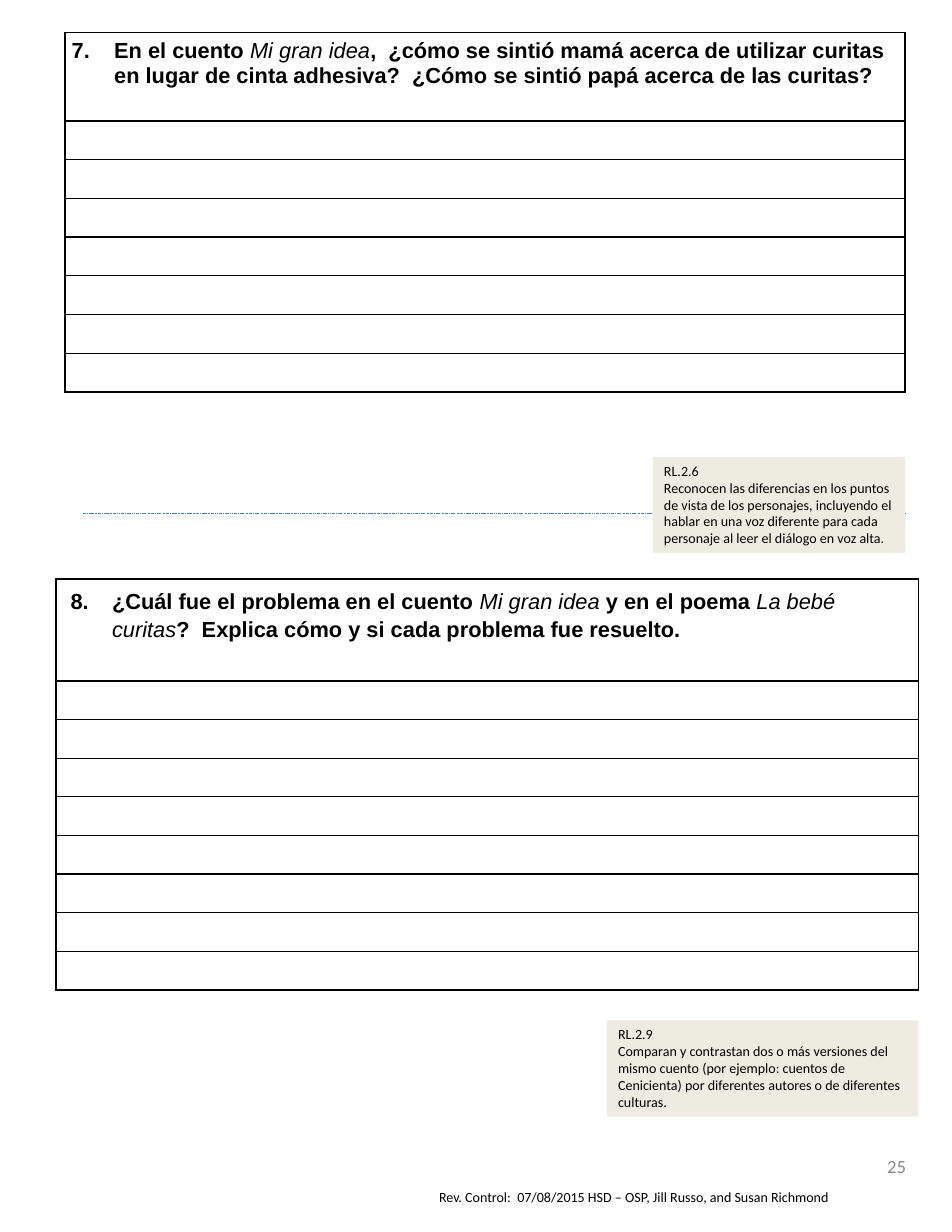
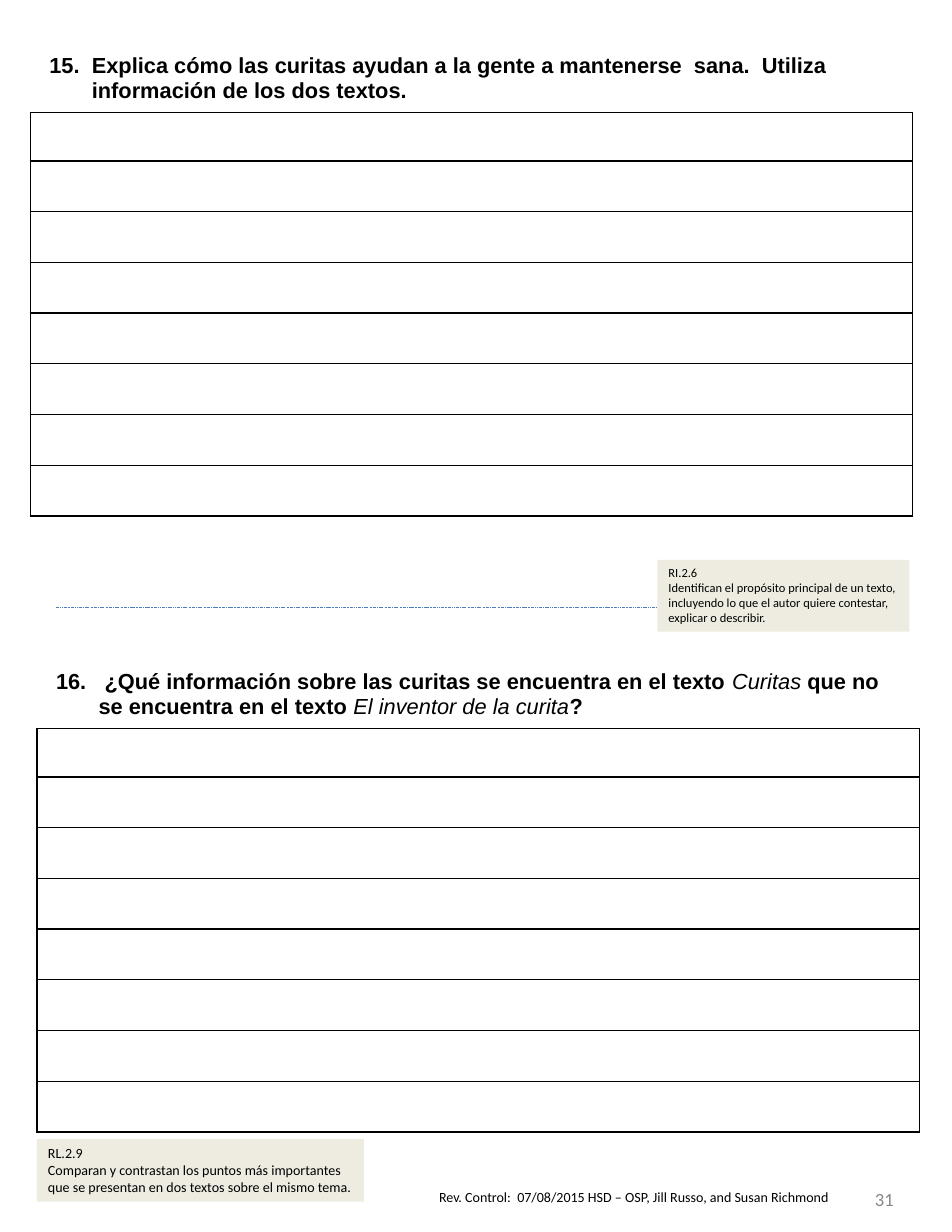
from dataclasses import dataclass

from lxml.etree import SubElement
from pptx import Presentation
from pptx.dml.color import RGBColor
from pptx.enum.dml import MSO_LINE
from pptx.enum.shapes import MSO_CONNECTOR, MSO_SHAPE
from pptx.enum.text import MSO_ANCHOR, PP_ALIGN
from pptx.oxml import parse_xml
from pptx.oxml.ns import nsdecls, qn
from pptx.util import Inches, Pt


@dataclass(frozen=True)
class Theme:
    ink: str = "000000"
    page_number: str = "888888"
    standard_fill: str = "EEECE1"
    divider: str = "4A7EBB"
    question_font: str = "Arial"
    body_font: str = "Calibri"
    question_size: int = 14
    answer_size: int = 12
    page_size: int = 12
    small_size: int = 9
    smallest_size: int = 8
    border_width: float = 1
    divider_width: float = 0.25


THEME = Theme()
FOOTER = "Rev. Control:  07/08/2015 HSD – OSP, Jill Russo, and Susan Richmond"
FOOTER_BOX = (3.81, 10.56, 4.25, 0.26)

# Questions: text alternates bold and italic; "heads" are the rows of their own
# height, and the remaining rows share what is left of the box height.
PAGES = [
    {
        "number": "25",
        "number_box": (7.17, 10.25, 0.92, 0.33),
        "number_inset": (0, 0),
        "divider": (0.74, 4.58),
        "questions": [
            {
                "text": ["8.\t¿Cuál fue el problema en el cuento ", "Mi gran idea ",
                         "y en el poema ", "La bebé curitas",
                         "?  Explica cómo y si cada problema fue resuelto."],
                "box": (0.5, 5.17, 7.7, 3.67), "heads": [0.91], "rows": 9,
                "inset": 0.06, "indent": (0.44, -0.37), "spacing": 1.15,
                "framed": True,
            },
            {
                "text": ["En el cuento ", "Mi gran idea",
                         ",  ¿cómo se sintió mamá acerca de utilizar curitas en lugar "
                         "de cinta adhesiva?  ¿Cómo se sintió papá acerca de las curitas?"],
                "start": 7,
                "box": (0.58, 0.29, 7.5, 3.21), "heads": [0.79], "rows": 8,
                "inset": 0.06, "indent": (0.38, -0.38), "framed": True,
            },
        ],
        "standards": [
            ("RL.2.6", "Reconocen las diferencias en los puntos de vista de los personajes, "
             "incluyendo el hablar en una voz diferente para cada personaje al leer el "
             "diálogo en voz alta.", (5.83, 4.08, 2.25, 0.86), THEME.small_size),
            ("RL.2.9", "Comparan y contrastan dos o más versiones del mismo cuento (por "
             "ejemplo: cuentos de Cenicienta) por diferentes autores o de diferentes "
             "culturas.", (5.42, 9.11, 2.78, 0.86), THEME.small_size),
        ],
    },
    {
        "number": "31",
        "number_box": (7.17, 10.41, 0.92, 0.59),
        "number_inset": (0.11, 0.06),
        "divider": (0.5, 5.42),
        "questions": [
            {
                "text": ["Explica cómo las curitas ayudan a la gente a mantenerse  sana.  "
                         "Utiliza información de los dos textos."],
                "start": 15,
                "box": (0.27, 0.42, 7.88, 4.18), "heads": [0.58, 0.43], "rows": 9,
                "inset": 0.11, "indent": (0.44, -0.38), "framed": False,
            },
            {
                "text": [" ¿Qué información sobre las curitas se encuentra en el texto ",
                         "Curitas ", "que no se encuentra en el texto ",
                         "El inventor de la curita", "?"],
                "start": 16,
                "box": (0.33, 5.92, 7.88, 4.18), "heads": [0.58, 0.43], "rows": 9,
                "inset": 0.11, "indent": (0.44, -0.38), "framed": False,
            },
        ],
        "standards": [
            ("RI.2.6", "Identifican el propósito principal de un texto, incluyendo lo que "
             "el autor quiere contestar, explicar o describir.",
             (5.87, 5, 2.25, 0.64), THEME.smallest_size),
            ("RL.2.9", "Comparan y contrastan los puntos más importantes que se presentan "
             "en dos textos sobre el mismo tema.",
             (0.33, 10.17, 2.92, 0.56), THEME.small_size),
        ],
    },
]
DIVIDER_LENGTH = 7.34


def inches(box):
    return [Inches(length) for length in box]


def write(paragraph, text, *, size, font=THEME.body_font, color=THEME.ink,
          bold=False, italic=False, align=PP_ALIGN.LEFT):
    paragraph.alignment = align
    run = paragraph.add_run()
    run.text = text
    run.font.size = Pt(size)
    run.font.name = font
    run.font.bold = bold
    run.font.italic = italic
    run.font.color.rgb = RGBColor.from_string(color)


def set_frame(frame, inset, anchor=MSO_ANCHOR.TOP):
    frame.word_wrap = True
    frame.vertical_anchor = anchor
    frame.margin_left = frame.margin_right = Inches(inset[0])
    frame.margin_top = frame.margin_bottom = Inches(inset[1])


def add_label(slide, text, box, inset, anchor=MSO_ANCHOR.TOP, **style):
    frame = slide.shapes.add_textbox(*inches(box)).text_frame
    set_frame(frame, inset, anchor)
    write(frame.paragraphs[0], text, **style)


def set_borders(cell, visible):
    properties = cell._tc.get_or_add_tcPr()
    for position, side in enumerate("LRTB"):
        paint = (f'<a:solidFill><a:srgbClr val="{THEME.ink}"/></a:solidFill>'
                 if side in visible else "<a:noFill/>")
        properties.insert(position, parse_xml(
            f'<a:ln{side} {nsdecls("a")} w="{Pt(THEME.border_width)}">{paint}</a:ln{side}>'))


def write_question(paragraph, question):
    for index, part in enumerate(question["text"]):
        italic = index % 2 == 1
        write(paragraph, part, size=THEME.question_size, font=THEME.question_font,
              bold=not italic, italic=italic)
    paragraph.line_spacing = question.get("spacing", 1.0)
    properties = paragraph._p.get_or_add_pPr()
    margin, hanging = inches(question["indent"])
    properties.set("marL", str(margin))
    properties.set("indent", str(hanging))
    if "start" in question:
        SubElement(properties, qn("a:buFont"), typeface="+mj-lt")
        SubElement(properties, qn("a:buAutoNum"), type="arabicPeriod",
                   startAt=str(question["start"]))


def add_question(slide, question):
    heads, count = question["heads"], question["rows"]
    answer_height = (question["box"][3] - sum(heads)) / (count - len(heads))
    heights = heads + [answer_height] * (count - len(heads))
    grid = slide.shapes.add_table(count, 1, *inches(question["box"])).table
    grid.first_row = grid.horz_banding = False
    for index, height in enumerate(heights):
        grid.rows[index].height = Inches(height)
        cell = grid.cell(index, 0)
        cell.margin_left = cell.margin_right = Inches(question["inset"])
        cell.margin_top = cell.margin_bottom = Inches(0.06)
        cell.fill.background()
        set_borders(cell, "LRTB" if index or question["framed"] else "B")
        paragraph = cell.text_frame.paragraphs[0]
        if index == 0:
            write_question(paragraph, question)
        else:
            SubElement(paragraph._p, qn("a:endParaRPr"), sz=str(THEME.answer_size * 100))


def add_divider(slide, left, top):
    divider = slide.shapes.add_connector(
        MSO_CONNECTOR.STRAIGHT, *inches((left, top, left + DIVIDER_LENGTH, top)))
    divider.line.color.rgb = RGBColor.from_string(THEME.divider)
    divider.line.width = Pt(THEME.divider_width)
    divider.line.dash_style = MSO_LINE.DASH_DOT_DOT
    SubElement(divider._element.spPr, qn("a:effectLst"))


def add_standard(slide, code, description, box, size):
    standard = slide.shapes.add_shape(MSO_SHAPE.RECTANGLE, *inches(box))
    standard.shadow.inherit = False
    standard.fill.solid()
    standard.fill.fore_color.rgb = RGBColor.from_string(THEME.standard_fill)
    standard.line.fill.background()
    set_frame(standard.text_frame, (0.1, 0.05))
    paragraph = standard.text_frame.paragraphs[0]
    write(paragraph, code, size=size)
    paragraph.add_line_break()
    write(paragraph, description, size=size)


def main():
    deck = Presentation()
    deck.slide_width, deck.slide_height = Inches(8.5), Inches(11)
    for page in PAGES:
        slide = deck.slides.add_slide(deck.slide_layouts[6])
        # Footer and page number
        add_label(slide, FOOTER, FOOTER_BOX, (0.11, 0.05), size=THEME.small_size)
        add_label(slide, page["number"], page["number_box"], page["number_inset"],
                  MSO_ANCHOR.MIDDLE, size=THEME.page_size,
                  color=THEME.page_number, align=PP_ALIGN.RIGHT)
        # Questions with answer lines
        for question in page["questions"]:
            add_question(slide, question)
        # Divider, partly covered by the standards
        add_divider(slide, *page["divider"])
        for standard in page["standards"]:
            add_standard(slide, *standard)
    deck.save("out.pptx")


if __name__ == "__main__":
    main()
